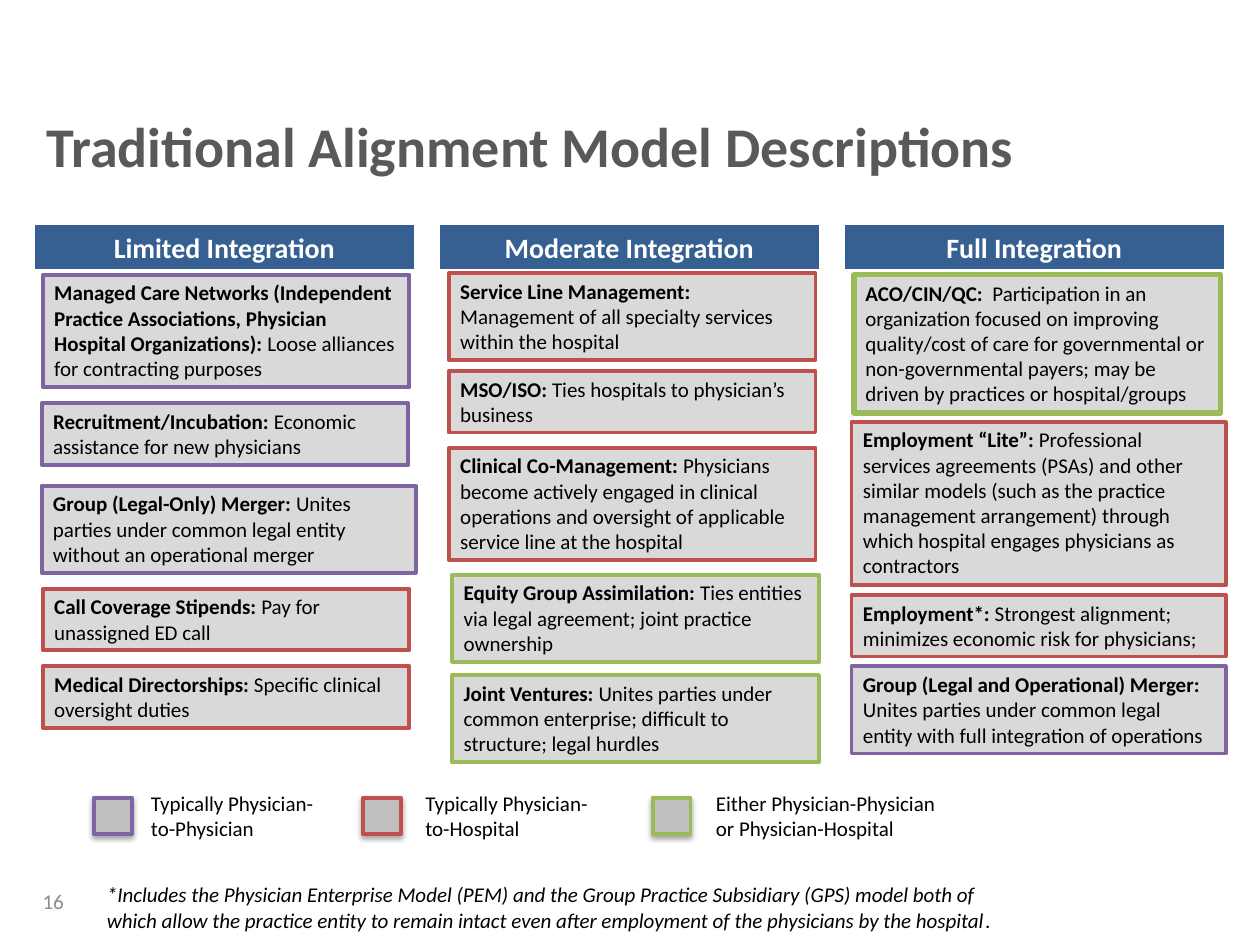
import dataclasses
import typing

import lxml.etree
import pptx
import pptx.dml.color
import pptx.enum.shapes
import pptx.enum.text
import pptx.oxml.ns
import pptx.util

Pt = pptx.util.Pt
Anchor = pptx.enum.text.MSO_ANCHOR
Align = pptx.enum.text.PP_ALIGN
AutoSize = pptx.enum.text.MSO_AUTO_SIZE


@dataclasses.dataclass(frozen=True)
class Theme:
    font: str = "Calibri"
    title_size: float = 32
    header_size: float = 16
    body_size: float = 12
    title: str = "595959"
    header: str = "376092"
    card: str = "D9D9D9"
    swatch: str = "BFBFBF"
    number: str = "8C8C8C"
    text: str = "000000"
    white: str = "FFFFFF"
    physician: str = "8064A2"
    hospital: str = "C0504D"
    either: str = "9BBB59"


THEME = Theme()
LINE_HEIGHT = 14.6
CARD_PADDING = 6
HEADER_LEFT, HEADER_TOP = 19.5, 128.2
HEADER_WIDTH, HEADER_HEIGHT = 217.4, 26
COLUMN_PITCH = 231.4
NARROW, WIDE = 209.5, 213.8


class Box(typing.NamedTuple):
    left: float
    top: float
    width: float
    height: float


class Span(typing.NamedTuple):
    text: str
    size: float = THEME.body_size
    color: str = THEME.text
    bold: bool = False
    italic: bool = False


class Card(typing.NamedTuple):
    left: float
    top: float
    width: float
    lines: int
    border: str
    name: str
    description: str
    border_width: float = 2.25


class Column(typing.NamedTuple):
    heading: str
    cards: list[Card]


class LegendEntry(typing.NamedTuple):
    swatch_left: float
    label_left: float
    label_width: float
    color: str
    label: str


COLUMNS = [
    Column("Limited Integration", [
        Card(24.5, 157, NARROW, 4, THEME.physician,
             "Managed Care Networks (Independent Practice Associations, Physician Hospital Organizations): ",
             "Loose alliances for contracting purposes"),
        Card(23.8, 230.4, NARROW, 2, THEME.physician, "Recruitment/Incubation: ",
             "Economic assistance for new physicians"),
        Card(23.8, 277.5, WIDE, 3, THEME.physician, "Group (Legal-Only) Merger: ",
             "Unites parties under common legal entity without an operational merger"),
        Card(24.5, 336.4, NARROW, 2, THEME.hospital, "Call Coverage Stipends: ",
             "Pay for unassigned ED call"),
        Card(24.5, 380.8, NARROW, 2, THEME.hospital, "Medical Directorships: ",
             "Specific clinical oversight duties"),
    ]),
    Column("Moderate Integration", [
        Card(256.5, 156, NARROW, 3, THEME.hospital, "Service Line Management: ",
             "Management of all specialty services within the hospital"),
        Card(256.5, 212, NARROW, 2, THEME.hospital, "MSO/ISO: ",
             "Ties hospitals to physician’s business"),
        Card(256.5, 255.8, NARROW, 4, THEME.hospital, "Clinical Co-Management: ",
             "Physicians become actively engaged in clinical operations and oversight "
             "of applicable service line at the hospital"),
        Card(258.5, 328.4, NARROW, 3, THEME.either, "Equity Group Assimilation: ",
             "Ties entities via legal agreement; joint practice ownership"),
        Card(258.5, 385.8, NARROW, 3, THEME.either, "Joint Ventures: ",
             "Unites parties under common enterprise; difficult to structure; legal hurdles"),
    ]),
    Column("Full Integration", [
        Card(488, 157, NARROW, 5, THEME.either, "ACO/CIN/QC:  ",
             "Participation in an organization focused on improving quality/cost of care for "
             "governmental or non-governmental payers; may be driven by practices or hospital/groups", 3),
        Card(486.6, 241, WIDE, 6, THEME.hospital, "Employment “Lite”: ",
             "Professional services agreements (PSAs) and other similar models (such as the practice "
             "management arrangement) through which hospital engages physicians as contractors"),
        Card(486.6, 340, WIDE, 2, THEME.hospital, "Employment*: ",
             "Strongest alignment; minimizes economic risk for physicians;"),
        Card(486.6, 380.8, WIDE, 3, THEME.physician, "Group (Legal and Operational) Merger: ",
             "Unites parties under common legal entity with full integration of operations"),
    ]),
]

LEGEND = [
    LegendEntry(53.7, 79.2, 117.4, THEME.physician, "Typically Physician-to-Physician"),
    LegendEntry(207.4, 236, 117.4, THEME.hospital, "Typically Physician-to-Hospital"),
    LegendEntry(373, 402, 147.6, THEME.either, "Either Physician-Physician or Physician-Hospital"),
]


def rgb(value: str) -> pptx.dml.color.RGBColor:
    return pptx.dml.color.RGBColor.from_string(value)


def write(shape, spans: list[Span], align=Align.LEFT, **frame_format) -> None:
    frame = shape.text_frame
    defaults = {"word_wrap": True, "vertical_anchor": Anchor.TOP, "auto_size": AutoSize.NONE,
                "margin_left": Pt(7.2), "margin_right": Pt(7.2),
                "margin_top": Pt(3.6), "margin_bottom": Pt(3.6)}
    for name, value in (defaults | frame_format).items():
        setattr(frame, name, value)
    para = frame.paragraphs[0]
    para.alignment = align
    for span in spans:
        run = para.add_run()
        run.text = span.text
        font_format = {"name": THEME.font, "size": Pt(span.size),
                       "bold": span.bold, "italic": span.italic}
        for name, value in font_format.items():
            setattr(run.font, name, value)
        run.font.color.rgb = rgb(span.color)


def add_rectangle(page, box: Box, fill: str, border: str, border_width: float):
    shape = page.shapes.add_shape(pptx.enum.shapes.MSO_SHAPE.RECTANGLE, *map(Pt, box))
    shape.shadow.inherit = False
    shape.fill.solid()
    shape.fill.fore_color.rgb = rgb(fill)
    shape.line.color.rgb = rgb(border)
    shape.line.width = Pt(border_width)
    return shape


def add_text(page, box: Box, spans: list[Span], **frame_format) -> None:
    write(page.shapes.add_textbox(*map(Pt, box)), spans, **frame_format)


def add_shadow(shape) -> None:
    qn = pptx.oxml.ns.qn
    effects = shape._element.spPr.find(qn("a:effectLst"))
    shadow = lxml.etree.SubElement(
        effects, qn("a:outerShdw"), blurRad=str(Pt(3.1)), dist=str(Pt(1.8)),
        dir="5400000", rotWithShape="0")
    color = lxml.etree.SubElement(shadow, qn("a:srgbClr"), val=THEME.text)
    lxml.etree.SubElement(color, qn("a:alpha"), val="35000")


def add_card(page, card: Card) -> None:
    box = Box(card.left, card.top, card.width, card.lines * LINE_HEIGHT + CARD_PADDING)
    shape = add_rectangle(page, box, THEME.card, card.border, card.border_width)
    write(shape, [Span(card.name, bold=True), Span(card.description)],
          margin_left=Pt(6.5), margin_right=Pt(6.5),
          margin_top=Pt(3), margin_bottom=Pt(3))


def add_column(page, index: int, column: Column) -> None:
    box = Box(HEADER_LEFT + index * COLUMN_PITCH, HEADER_TOP, HEADER_WIDTH, HEADER_HEIGHT)
    header = add_rectangle(page, box, THEME.header, THEME.white, 0.75)
    write(header, [Span(column.heading, THEME.header_size, THEME.white, bold=True)],
          align=Align.CENTER, vertical_anchor=Anchor.MIDDLE,
          margin_top=Pt(3), margin_bottom=Pt(3))
    for card in column.cards:
        add_card(page, card)


def add_legend_entry(page, entry: LegendEntry) -> None:
    swatch = add_rectangle(page, Box(entry.swatch_left, 455.8, 21.6, 20.9),
                           THEME.swatch, entry.color, 2.25)
    add_shadow(swatch)
    add_text(page, Box(entry.label_left, 448, entry.label_width, 36), [Span(entry.label)])


def main() -> None:
    deck = pptx.Presentation()
    deck.slide_width, deck.slide_height = Pt(720), Pt(540)
    page = deck.slides.add_slide(deck.slide_layouts[6])
    add_text(page, Box(19.5, 62.6, 680.4, 78.5),
             [Span("Traditional Alignment Model Descriptions", THEME.title_size, THEME.title, bold=True)],
             margin_top=Pt(1))
    for index, column in enumerate(COLUMNS):
        add_column(page, index, column)
    for entry in LEGEND:
        add_legend_entry(page, entry)
    add_text(page, Box(17.3, 500.4, 36, 28.8), [Span("16", color=THEME.number)],
             vertical_anchor=Anchor.MIDDLE)
    add_text(page, Box(54, 500.4, 528.5, 36), [
        Span("*Includes the Physician Enterprise Model (PEM) and the Group Practice Subsidiary (GPS) "
             "model both of which allow the practice entity to remain intact even after employment "
             "of the physicians by the hospital", italic=True),
        Span("."),
    ])
    deck.save("out.pptx")


if __name__ == "__main__":
    main()
